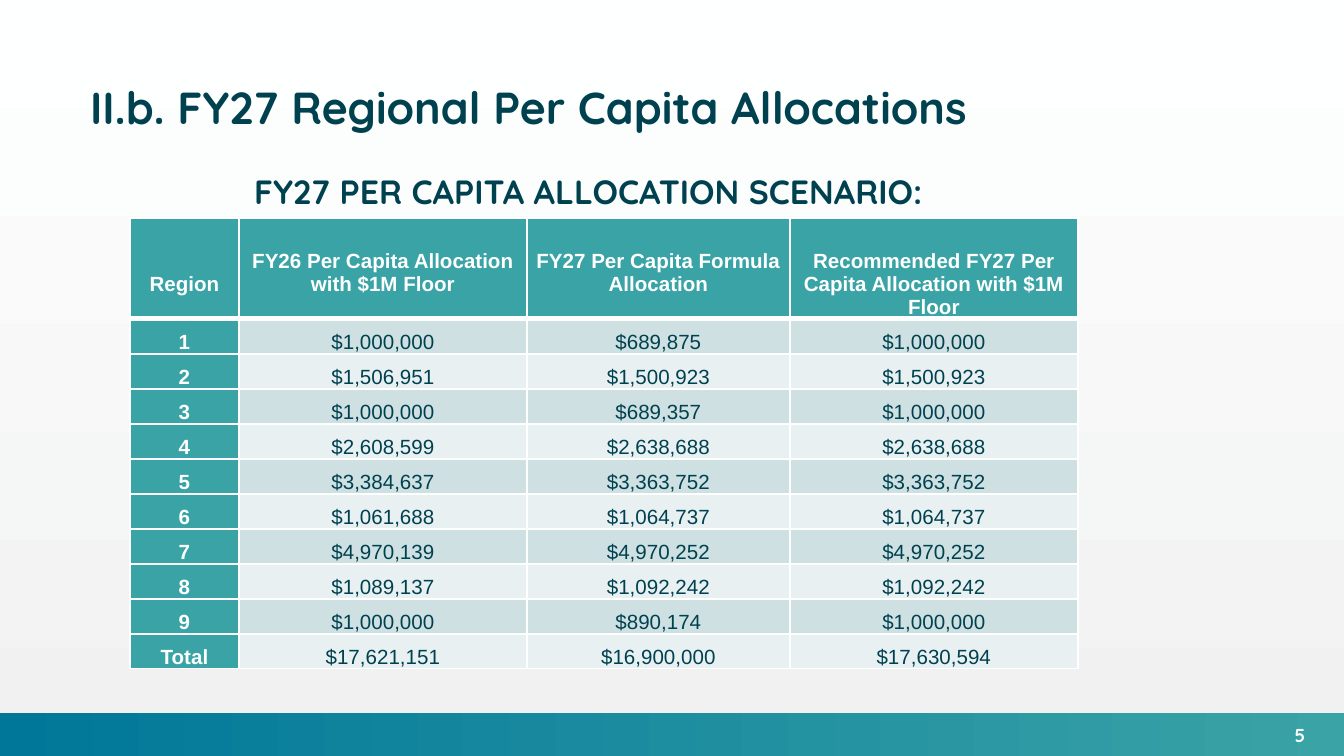
"""Build the slide of regional per capita allocations."""
import pptx
import pptx.dml.color
import pptx.enum.shapes
import pptx.enum.text
import pptx.oxml
import pptx.oxml.ns
import pptx.util

RGBColor = pptx.dml.color.RGBColor
ALIGN = pptx.enum.text.PP_ALIGN
ANCHOR = pptx.enum.text.MSO_ANCHOR
Pt = pptx.util.Pt

SCALE = 914400 / 134.4
WHITE = RGBColor(0xFE, 0xFF, 0xFF)
PALE_GREY = RGBColor(0xF1, 0xF1, 0xF1)
BLUE = RGBColor(0x00, 0x77, 0x99)
TEAL = RGBColor(0x3A, 0xA3, 0xA6)
NAVY = RGBColor(0x00, 0x41, 0x50)
STRIPES = (RGBColor(0xCE, 0xE0, 0xE1), RGBColor(0xE8, 0xF0, 0xF1))

HEADING_FONT = {"name": "Quicksand", "size": Pt(24), "bold": True}
SUBHEADING_FONT = {"name": "Quicksand", "size": Pt(18), "bold": True}
NUMBER_FONT = {"name": "Quicksand", "size": Pt(10), "bold": True}
LABEL_FONT = {"name": "Arial", "size": Pt(11), "bold": True}
VALUE_FONT = {"name": "Arial", "size": Pt(11), "bold": False}

COLUMN_WIDTHS = (109, 288, 263, 288)
HEADER_HEIGHT, ROW_HEIGHT = 101, 35
LINE_HEIGHT = 23
ALLOCATIONS = (
    ("Region", "FY26 Per Capita Allocation with $1M Floor",
     "FY27 Per Capita Formula Allocation",
     "Recommended FY27 Per Capita Allocation with $1M Floor"),
    ("1", "$1,000,000", "$689,875", "$1,000,000"),
    ("2", "$1,506,951", "$1,500,923", "$1,500,923"),
    ("3", "$1,000,000", "$689,357", "$1,000,000"),
    ("4", "$2,608,599", "$2,638,688", "$2,638,688"),
    ("5", "$3,384,637", "$3,363,752", "$3,363,752"),
    ("6", "$1,061,688", "$1,064,737", "$1,064,737"),
    ("7", "$4,970,139", "$4,970,252", "$4,970,252"),
    ("8", "$1,089,137", "$1,092,242", "$1,092,242"),
    ("9", "$1,000,000", "$890,174", "$1,000,000"),
    ("Total", "$17,621,151", "$16,900,000", "$17,630,594"),
)


def px(length):
    """Turn whole pixels into EMU."""
    return pptx.util.Emu(round(length * SCALE))


def apply_values(target, values):
    """Set each named attribute of the target."""
    for name, value in values.items():
        setattr(target, name, value)


def write_text(frame, text, font, color, align):
    """Put one formatted paragraph in a text frame."""
    para = frame.paragraphs[0]
    para.alignment = align
    span = para.add_run()
    span.text = text
    apply_values(span.font, font)
    span.font.color.rgb = color
    return para


def fill_gradient(fill, colors, angle):
    """Give a fill a straight gradient of two colours."""
    fill.gradient()
    fill.gradient_angle = angle
    for position, (stop, color) in enumerate(zip(fill.gradient_stops, colors)):
        stop.color.rgb = color
        stop.position = position


def add_title(page, text):
    """Place and format the title placeholder."""
    title = page.shapes.title
    apply_values(title, {"left": px(90), "top": px(87),
                         "width": px(1122), "height": px(47)})
    frame = title.text_frame
    apply_values(frame, {"margin_left": 0, "margin_top": 0, "margin_right": 0,
                         "margin_bottom": 0, "word_wrap": True,
                         "vertical_anchor": ANCHOR.TOP,
                         "auto_size": pptx.enum.text.MSO_AUTO_SIZE.NONE})
    para = write_text(frame, text, HEADING_FONT, NAVY, ALIGN.LEFT)
    para.line_spacing = Pt(24.8)


def add_label(page, bounds, text, font, color, align, frame_values):
    """Add a text box holding one line."""
    box = page.shapes.add_textbox(*map(px, bounds))
    apply_values(box.text_frame, frame_values)
    write_text(box.text_frame, text, font, color, align)


def add_footer_band(page):
    """Add the coloured band along the bottom edge."""
    band = page.shapes.add_shape(
        pptx.enum.shapes.MSO_SHAPE.RECTANGLE, *map(px, (0, 713, 1344, 43)))
    band.shadow.inherit = False
    band.line.fill.background()
    fill_gradient(band.fill, (BLUE, TEAL), 0)


def set_borders(cell, top, bottom):
    """Draw white cell borders, with widths in points."""
    properties = cell._tc.get_or_add_tcPr()
    namespace = pptx.oxml.ns.nsdecls("a")
    for side, width in (("L", 1), ("R", 1), ("T", top), ("B", bottom)):
        properties.append(pptx.oxml.parse_xml(
            f'<a:ln{side} {namespace} w="{Pt(width)}"><a:solidFill>'
            f'<a:srgbClr val="{WHITE}"/></a:solidFill></a:ln{side}>'))


def format_cell(cell, text, row, column):
    """Write and style one cell by its place in the table."""
    is_label = row == 0 or column == 0
    is_raised = row == 0 and column < len(COLUMN_WIDTHS) - 1
    apply_values(cell, {"margin_left": px(9), "margin_right": px(9),
                        "margin_top": 0,
                        "margin_bottom": px(LINE_HEIGHT if is_raised else 0),
                        "vertical_anchor": ANCHOR.BOTTOM})
    set_borders(cell, 3 if row == 1 else 1, 3 if row == 0 else 1)
    cell.fill.solid()
    cell.fill.fore_color.rgb = TEAL if is_label else STRIPES[(row - 1) % 2]
    write_text(cell.text_frame, text, LABEL_FONT if is_label else VALUE_FONT,
               WHITE if is_label else NAVY, ALIGN.CENTER)


def add_allocation_table(page):
    """Add the table of allocations by region."""
    height = HEADER_HEIGHT + ROW_HEIGHT * (len(ALLOCATIONS) - 1)
    table = page.shapes.add_table(
        len(ALLOCATIONS), len(COLUMN_WIDTHS),
        *map(px, (130, 218, sum(COLUMN_WIDTHS), height))).table
    for column, width in zip(table.columns, COLUMN_WIDTHS):
        column.width = px(width)
    for row, values in enumerate(ALLOCATIONS):
        table.rows[row].height = px(ROW_HEIGHT if row else HEADER_HEIGHT)
        for column, text in enumerate(values):
            format_cell(table.cell(row, column), text, row, column)


def main():
    """Build and save the deck."""
    deck = pptx.Presentation()
    apply_values(deck, {"slide_width": px(1344), "slide_height": px(756)})
    page = deck.slides.add_slide(deck.slide_layouts[5])
    fill_gradient(page.background.fill, (WHITE, PALE_GREY), 270)
    add_footer_band(page)
    add_label(page, (1271, 717, 58, 36), "5", NUMBER_FONT, WHITE,
              ALIGN.CENTER, {"word_wrap": True})
    add_title(page, "II.b. FY27 Regional Per Capita Allocations")
    add_allocation_table(page)
    add_label(page, (241, 164, 726, 54), "FY27 PER CAPITA ALLOCATION SCENARIO:",
              SUBHEADING_FONT, NAVY, ALIGN.JUSTIFY,
              {"word_wrap": False, "vertical_anchor": ANCHOR.MIDDLE})
    deck.save("out.pptx")


if __name__ == "__main__":
    main()
